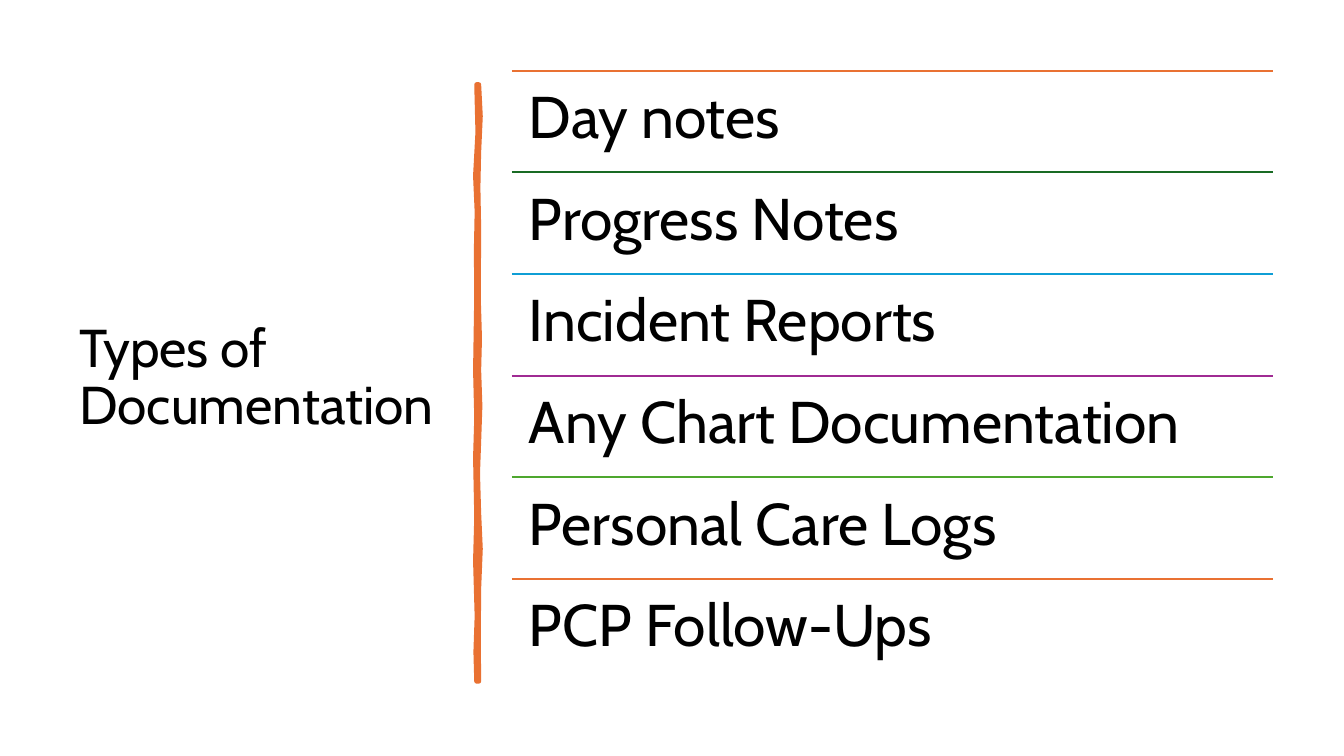
from dataclasses import dataclass

import pptx
import pptx.dml.color
import pptx.enum.shapes
import pptx.enum.text
import pptx.oxml
import pptx.oxml.ns
import pptx.util

Cm = pptx.util.Cm
Pt = pptx.util.Pt


@dataclass(frozen=True)
class Theme:
    font: str = "Cabin"
    text: str = "000000"
    orange: str = "E97132"
    green: str = "196B24"
    blue: str = "0F9ED5"
    purple: str = "A02B93"
    lime: str = "4EA72E"
    title_size: float = 38
    item_size: float = 42
    rule_width: float = 1.5
    brush_width: float = 3.25


THEME = Theme()

TITLE = "Types of Documentation"
ITEMS = [
    ("Day notes", THEME.orange),
    ("Progress Notes", THEME.green),
    ("Incident Reports", THEME.blue),
    ("Any Chart Documentation", THEME.purple),
    ("Personal Care Logs", THEME.lime),
    ("PCP Follow-Ups", THEME.orange),
]

# Brush edges: (distance down the stroke, offset from its centre line), in cm
BRUSH_RIGHT = [(0, 0.03), (0.8, 0.07), (1.7, 0.03), (2.6, 0.01), (3.6, 0.03),
               (5.4, 0.02), (6.4, 0.05), (7.2, 0.03), (8.1, 0.06), (9, 0.03),
               (9.8, 0), (10.8, 0.03), (11.7, 0.07), (12.7, 0.03),
               (14, 0.02), (15.04, 0.03)]
BRUSH_LEFT = [(15.04, -0.03), (14.3, -0.05), (13.4, -0.02), (12, -0.06),
              (10.9, -0.03), (9.4, -0.06), (8.4, -0.03), (7.2, -0.06),
              (5.3, -0.03), (4.2, -0.04), (3.2, -0.02), (2.3, -0.06),
              (1.2, 0), (0, -0.03)]


def rgb(value):
    return pptx.dml.color.RGBColor.from_string(value)


def add_text(slide, box, text, size, anchor, inset=None):
    shape = slide.shapes.add_textbox(*(Cm(length) for length in box))
    frame = shape.text_frame
    frame.word_wrap = True
    frame.vertical_anchor = anchor
    if inset is not None:
        frame.margin_left = frame.margin_right = Cm(inset)
        frame.margin_top = frame.margin_bottom = Cm(inset)
    frame.text = text
    paragraph = frame.paragraphs[0]
    paragraph.line_spacing = 0.9
    font = paragraph.runs[0].font
    font.name = THEME.font
    font.size = Pt(size)
    font.color.rgb = rgb(THEME.text)


def add_rule(slide, left, top, width, color):
    rule = slide.shapes.add_connector(
        pptx.enum.shapes.MSO_CONNECTOR.STRAIGHT,
        Cm(left), Cm(top), Cm(left + width), Cm(top))
    rule.line.color.rgb = rgb(color)
    rule.line.width = Pt(THEME.rule_width)
    properties = rule._element.spPr
    properties.append(pptx.oxml.parse_xml(
        f"<a:effectLst {pptx.oxml.ns.nsdecls('a')}/>"))


def add_title(slide, box):
    add_text(slide, box, TITLE, THEME.title_size,
             pptx.enum.text.MSO_ANCHOR.MIDDLE)


def add_brush_divider(slide, center, top):
    """Draw the uneven vertical stroke between title and list."""
    start, *outline = [(Cm(center + offset), Cm(top + distance))
                       for distance, offset in BRUSH_RIGHT + BRUSH_LEFT]
    builder = slide.shapes.build_freeform(*start)
    builder.add_line_segments(outline, close=True)
    stroke = builder.convert_to_shape()
    stroke.shadow.inherit = False
    stroke.fill.solid()
    stroke.fill.fore_color.rgb = rgb(THEME.orange)
    stroke.line.color.rgb = rgb(THEME.orange)
    stroke.line.width = Pt(THEME.brush_width)


def add_ruled_list(slide, box):
    left, top, width, height = box
    row_height = height / len(ITEMS)
    for index, (text, color) in enumerate(ITEMS):
        row_top = top + index * row_height
        add_rule(slide, left, row_top, width, color)
        add_text(slide, (left, row_top, width, row_height), text,
                 THEME.item_size, pptx.enum.text.MSO_ANCHOR.TOP, inset=0.43)


def main():
    presentation = pptx.Presentation()
    presentation.slide_width = Cm(33.87)
    presentation.slide_height = Cm(19.05)
    slide = presentation.slides.add_slide(presentation.slide_layouts[6])
    add_title(slide, (1.75, 1.78, 9.5, 15.52))
    add_brush_divider(slide, center=12.04, top=2.13)
    add_ruled_list(slide, (12.9, 1.78, 19.18, 15.37))
    presentation.save("out.pptx")


if __name__ == "__main__":
    main()
